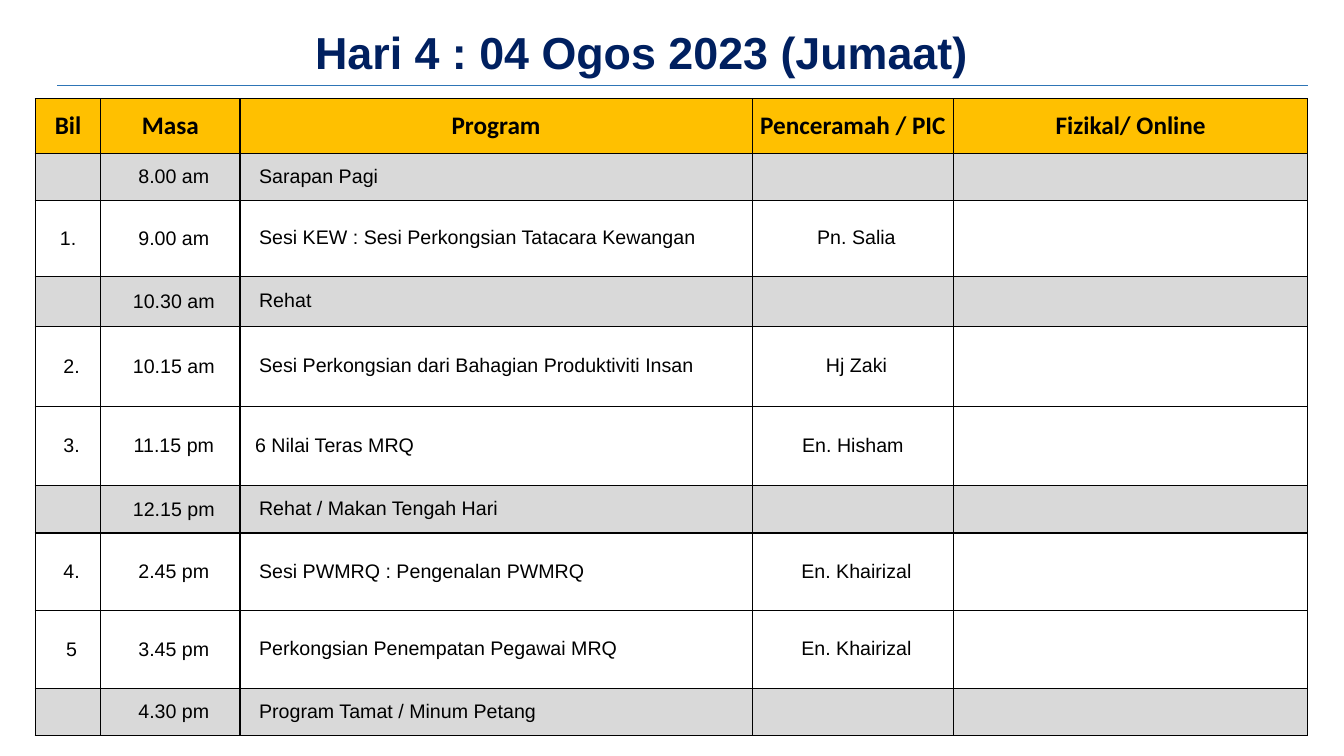
"""Build the day four programme slide with its timetable."""
from lxml import etree
from pptx import Presentation
from pptx.dml.color import RGBColor
from pptx.enum.shapes import MSO_CONNECTOR
from pptx.enum.text import MSO_ANCHOR, MSO_AUTO_SIZE, PP_ALIGN
from pptx.oxml.ns import qn
from pptx.util import Pt

PX = 9144
NAVY = RGBColor(0x00, 0x20, 0x60)
BLUE = RGBColor(0x2E, 0x75, 0xB6)
GOLD = RGBColor(0xFF, 0xC0, 0x00)
GREY = RGBColor(0xD9, 0xD9, 0xD9)
WHITE = RGBColor(0xFF, 0xFF, 0xFF)
BLACK = RGBColor(0x00, 0x00, 0x00)
LEFT, MID = PP_ALIGN.LEFT, PP_ALIGN.CENTER
MIDDLE = MSO_ANCHOR.MIDDLE
STRAIGHT = MSO_CONNECTOR.STRAIGHT
FIXED = MSO_AUTO_SIZE.NONE

WIDTHS = [65, 138, 508, 200, 351]
HEADS = ["Bil", "Masa", "Program", "Penceramah / PIC", "Fizikal/ Online"]
ROWS = [
    (47, "", "8.00 am", "Sarapan Pagi", ""),
    (75, "1.", "9.00 am", "Sesi KEW : Sesi Perkongsian Tatacara Kewangan", "Pn. Salia"),
    (50, "", "10.30 am", "Rehat", ""),
    (79, "2.", "10.15 am", "Sesi Perkongsian dari Bahagian Produktiviti Insan", "Hj Zaki"),
    (79, "3.", "11.15 pm", "6 Nilai Teras MRQ", "En. Hisham"),
    (47, "", "12.15 pm", "Rehat / Makan Tengah Hari", ""),
    (77, "4.", "2.45 pm", "Sesi PWMRQ : Pengenalan PWMRQ", "En. Khairizal"),
    (77, "5", "3.45 pm", "Perkongsian Penempatan Pegawai MRQ", "En. Khairizal"),
    (47, "", "4.30 pm", "Program Tamat / Minum Petang", ""),
]
INDENTS = [7, 7, 19, 7, 7]
LEADS = [16, 16, 15, 15, 15]
SHIFTS = {(2, 0): 0, (5, 2): 15, (5, 3): 0}


def style(par, font, size, color, bold, align):
    """Align a paragraph and format its runs."""
    par.alignment = align
    for run in par.runs:
        run.font.name = font
        run.font.size = Pt(size)
        run.font.bold = bold
        run.font.color.rgb = color


def frame(cell):
    """Draw a thin black border on all four sides of a cell."""
    props = cell._tc.get_or_add_tcPr()
    for spot, side in enumerate(("a:lnL", "a:lnR", "a:lnT", "a:lnB")):
        edge = etree.Element(qn(side), w=str(Pt(1)))
        paint = etree.SubElement(edge, qn("a:solidFill"))
        etree.SubElement(paint, qn("a:srgbClr"), val=str(BLACK))
        props.insert(spot, edge)


deck = Presentation()
deck.slide_width, deck.slide_height = 1333 * PX, 750 * PX
slide = deck.slides.add_slide(deck.slide_layouts[5])

rule = slide.shapes.add_connector(STRAIGHT, 57 * PX, 85 * PX, 1297 * PX, 85 * PX)
rule.line.color.rgb = BLUE
rule.line.width = Pt(0.5)
etree.SubElement(rule._element.spPr, qn("a:effectLst"))

title = slide.shapes.title
title.left, title.top, title.width, title.height = 190 * PX, 24 * PX, 893 * PX, 54 * PX
title.text_frame.text = "Hari 4 : 04 Ogos 2023 (Jumaat)"
title.text_frame.auto_size = FIXED
title.text_frame.vertical_anchor = MIDDLE
style(title.text_frame.paragraphs[0], "Arial", 32, NAVY, True, MID)

highs = [54] + [row[0] for row in ROWS]
grid = slide.shapes.add_table(
    len(highs), len(WIDTHS), 35 * PX, 98 * PX, sum(WIDTHS) * PX, sum(highs) * PX
).table
grid.first_row = grid.horz_banding = False
for col, width in zip(grid.columns, WIDTHS):
    col.width = width * PX
for row, high in zip(grid.rows, highs):
    row.height = high * PX

texts = [HEADS] + [[*row[1:], ""] for row in ROWS]
for r, line in enumerate(texts):
    fill = GOLD if r == 0 else WHITE if line[3] else GREY
    for c, text in enumerate(line):
        cell = grid.cell(r, c)
        cell.fill.solid()
        cell.fill.fore_color.rgb = fill
        frame(cell)
        cell.vertical_anchor = MIDDLE
        cell.margin_top = cell.margin_bottom = 0
        cell.margin_left = SHIFTS.get((r, c), INDENTS[c] if r else 7) * PX
        cell.margin_right = 0 if r else 7 * PX
        par = cell.text_frame.paragraphs[0]
        par.text = text
        if r == 0:
            style(par, "Calibri", 18, BLACK, True, MID)
        else:
            style(par, "Arial", 14, BLACK, False, LEFT if c == 2 else MID)
            par.line_spacing = Pt(LEADS[c])

deck.save("out.pptx")
